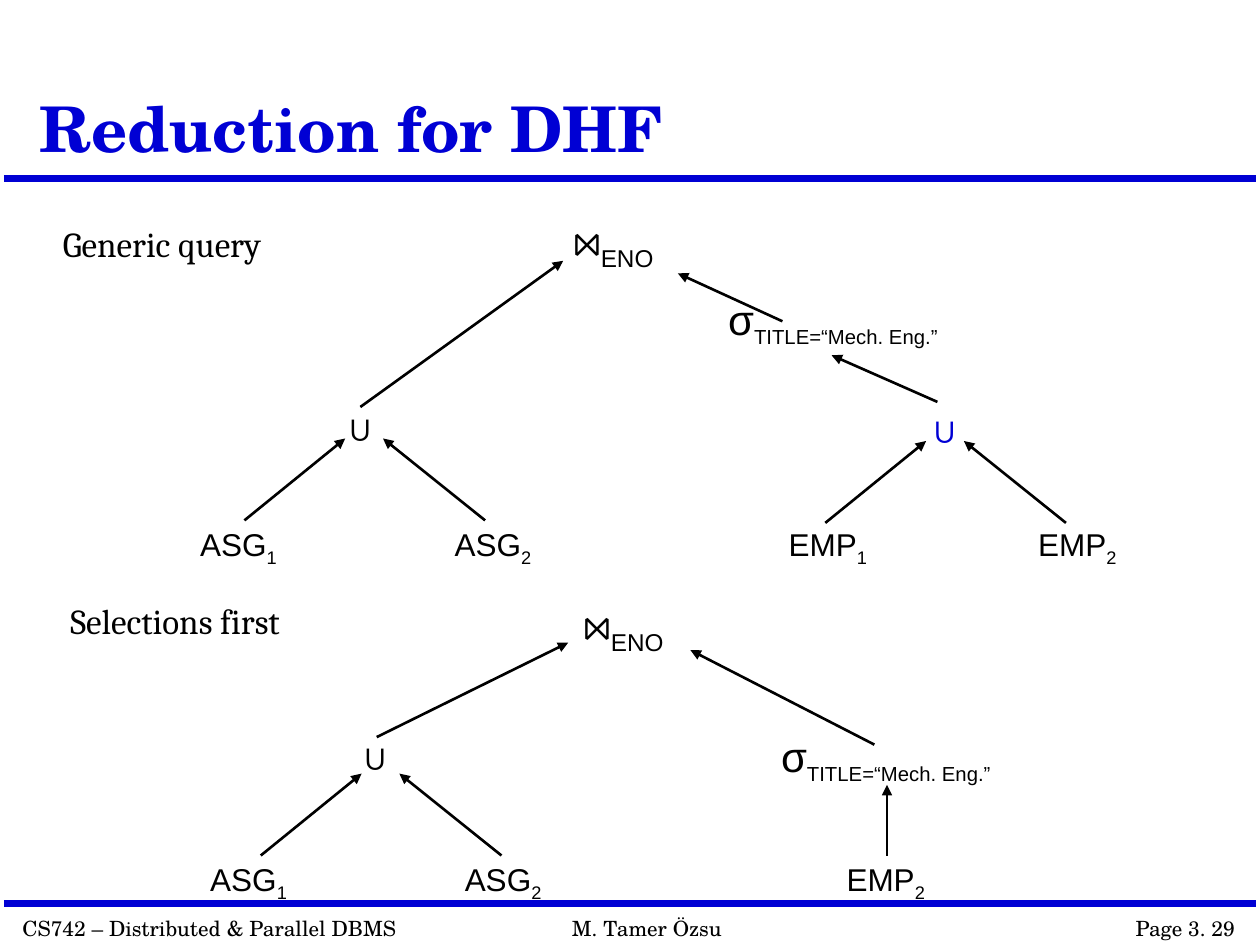
from dataclasses import dataclass

from lxml.etree import SubElement
from pptx import Presentation
from pptx.dml.color import RGBColor as Color
from pptx.enum.shapes import MSO_CONNECTOR as Connector
from pptx.enum.text import MSO_ANCHOR as Anchor, MSO_AUTO_SIZE as AutoSize, PP_ALIGN as Align
from pptx.oxml.ns import qn
from pptx.util import Pt

EMU_PER_PX = 9144


def px(length):
    return length * EMU_PER_PX


@dataclass(frozen=True)
class Theme:
    ink: str = "000000"
    accent: str = "0000D4"
    display: str = "TeX Gyre Schola"
    serif: str = "Cambria"
    sans: str = "Arial"
    title: int = 36
    join: int = 25
    operator: int = 24
    label: int = 20
    leaf: int = 18
    footer: int = 12
    rule: float = 4
    arrow: float = 1.5


def add_span(para, text, *, font, size, color, bold=False, subscript=False):
    span = para.add_run()
    span.text = text
    span.font.name = font
    span.font.size = Pt(size)
    span.font.bold = bold
    span.font.color.rgb = Color.from_string(color)
    if subscript:
        span._r.get_or_add_rPr().set("baseline", "-25000")
    return span


class TreeSlide:
    def __init__(self, page, theme):
        self.page = page
        self.theme = theme

    def title(self, text, left, top, width, height):
        box = self.page.shapes.title
        box.left, box.top, box.width, box.height = map(px, (left, top, width, height))
        frame = box.text_frame
        frame.auto_size = AutoSize.NONE
        frame.vertical_anchor = Anchor.BOTTOM
        para = frame.paragraphs[0]
        para.alignment = Align.LEFT
        para.line_spacing = 0.9
        add_span(para, text, font=self.theme.display, size=self.theme.title,
                 color=self.theme.accent, bold=True)

    def box(self, left, top, width, height, *, wrap=False, align=Align.LEFT):
        box = self.page.shapes.add_textbox(*map(px, (left, top, width, height)))
        frame = box.text_frame
        frame.word_wrap = wrap
        frame.auto_size = AutoSize.NONE if wrap else AutoSize.SHAPE_TO_FIT_TEXT
        para = frame.paragraphs[0]
        para.alignment = align
        return para

    def line(self, start, end, color, width):
        line = self.page.shapes.add_connector(Connector.STRAIGHT, *map(px, start + end))
        line.line.color.rgb = Color.from_string(color)
        line.line.width = Pt(width)
        SubElement(line._element.spPr, qn("a:effectLst"))
        return line

    def rule(self, y):
        self.line((3, y), (997, y), self.theme.accent, self.theme.rule)

    def arrow(self, start, end):
        line = self.line(start, end, self.theme.ink, self.theme.arrow)
        SubElement(line.line._get_or_add_ln(), qn("a:tailEnd"), type="triangle")

    def footer(self, text, left, width, align=Align.LEFT):
        para = self.box(left, 722, width, 30, align=align)
        add_span(para, text, font=self.theme.display, size=self.theme.footer,
                 color=self.theme.ink)

    def heading(self, text, left, top):
        para = self.box(left, top, 265, 53, wrap=True)
        para.line_spacing = 1.3
        add_span(para, text, font=self.theme.serif, size=self.theme.label,
                 color=self.theme.ink)

    def union(self, left, top, color):
        para = self.box(left, top, 42, 43)
        add_span(para, "∪", font=self.theme.sans, size=self.theme.label, color=color)

    def leaf(self, relation, fragment, left, top):
        para = self.box(left, top, 85, 41)
        style = dict(font=self.theme.sans, size=self.theme.leaf, color=self.theme.ink)
        add_span(para, relation, **style)
        add_span(para, fragment, subscript=True, **style)

    def selection(self, left, top):
        para = self.box(left, top, 209, 50)
        style = dict(font=self.theme.sans, color=self.theme.ink)
        add_span(para, "σ", size=self.theme.operator, **style)
        add_span(para, "TITLE=“Mech. Eng.”", size=self.theme.label, subscript=True, **style)

    def join(self, left, top):
        para = self.box(left, top, 110, 52, wrap=True)
        add_span(para, "⋈", font=self.theme.serif, size=self.theme.join,
                 color=self.theme.ink)
        add_span(para, "ENO", font=self.theme.sans, size=self.theme.operator,
                 color=self.theme.ink, subscript=True)

    def arrow_pair(self, left, bottom):
        for start, end in ((0, 80), (191, 110)):
            self.arrow((left + start, bottom), (left + end, bottom - 65))


def main():
    deck = Presentation()
    deck.slide_width, deck.slide_height = px(1000), px(750)
    theme = Theme()
    slide = TreeSlide(deck.slides.add_slide(deck.slide_layouts[5]), theme)

    for y in (142, 717):
        slide.rule(y)
    slide.footer("CS742 – Distributed & Parallel DBMS", 8, 320)
    slide.footer("Page 3. 29", 890, 100, Align.RIGHT)
    slide.footer("M. Tamer Özsu", 444, 139)
    slide.title("Reduction for DHF", 21, 12, 783, 125)

    slide.heading("Generic query", 40, 162)
    slide.heading("Selections first", 46, 461)

    for left, top in ((445, 164), (453, 469)):
        slide.join(left, top)
    for left, top in ((568, 228), (610, 575)):
        slide.selection(left, top)
    for left, top, color in ((266, 318, theme.ink), (730, 319, theme.accent),
                             (278, 579, theme.ink)):
        slide.union(left, top, color)

    for relation, fragment, left, top in (
        ("ASG", "1", 149, 412), ("ASG", "2", 351, 412),
        ("EMP", "1", 616, 412), ("EMP", "2", 814, 412),
        ("ASG", "1", 157, 678), ("ASG", "2", 359, 678), ("EMP", "2", 662, 678),
    ):
        slide.leaf(relation, fragment, left, top)

    for left, bottom in ((194, 413), (655, 415), (207, 679)):
        slide.arrow_pair(left, bottom)
    for start, end in (
        ((744, 319), (660, 282)), ((621, 255), (538, 217)), ((286, 323), (447, 207)),
        ((299, 585), (451, 510)), ((694, 591), (548, 516)), ((704, 679), (704, 623)),
    ):
        slide.arrow(start, end)

    deck.save("out.pptx")


if __name__ == "__main__":
    main()
